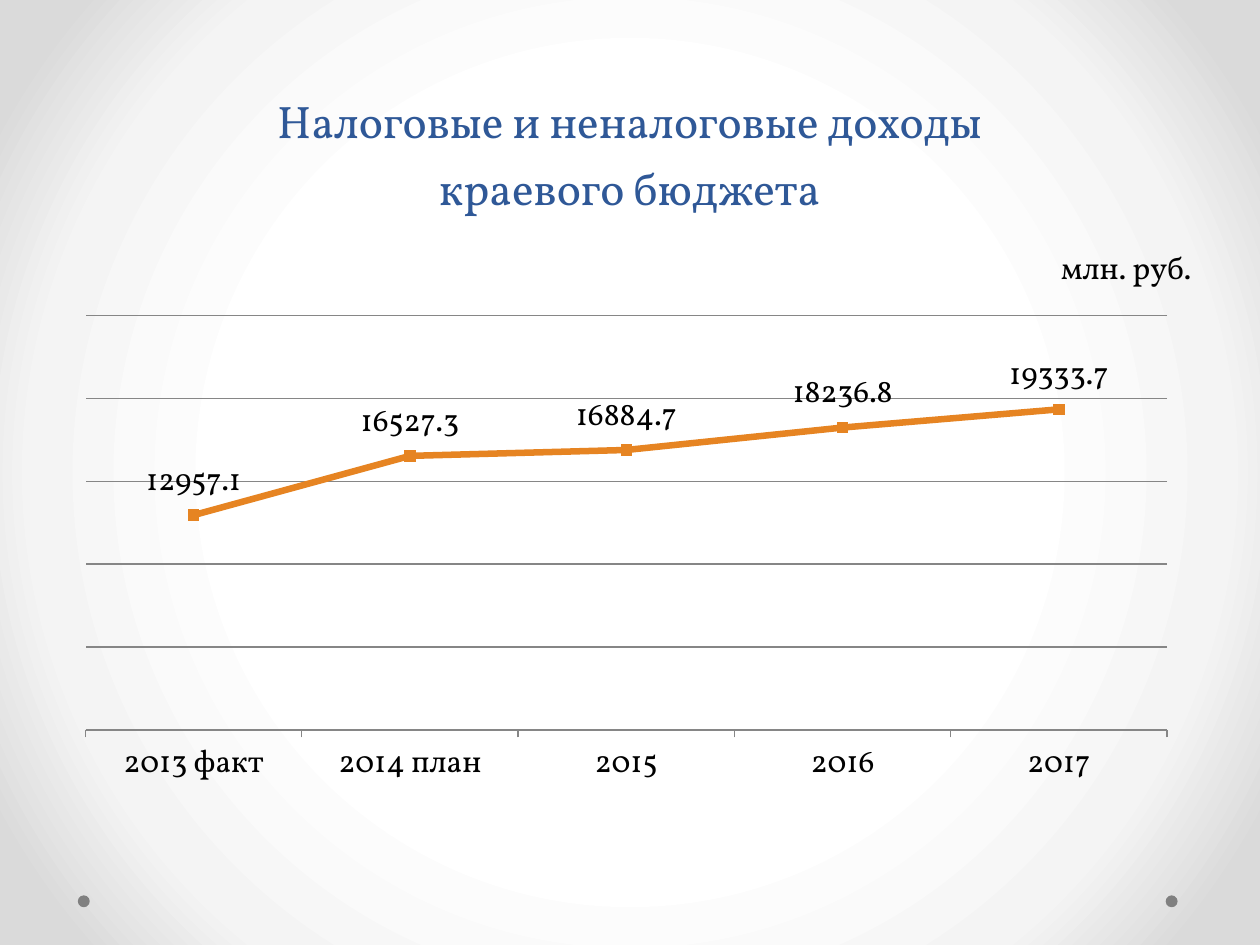
from lxml import etree
from pptx import Presentation
from pptx.chart.data import CategoryChartData
from pptx.dml.color import RGBColor
from pptx.enum.chart import (XL_CHART_TYPE, XL_LABEL_POSITION as LabelPos,
                             XL_MARKER_STYLE as Marker, XL_TICK_MARK as Tick)
from pptx.enum.shapes import MSO_SHAPE as Shape
from pptx.enum.text import MSO_ANCHOR as Anchor, PP_ALIGN as Align
from pptx.oxml import parse_xml
from pptx.oxml.ns import nsdecls, qn
from pptx.util import Cm, Pt

FONT = "Vollkorn"
COLORS = {"title": "2F5897", "text": "000000", "line": "E68422",
          "grid": "868686", "dot": "808080"}
BACKGROUND = [(50, "FFFFFF"), (76, "F4F4F4"), (92, "DADADA")]
INCOME = {"2013 факт": 12957.1, "2014 план": 16527.3, "2015": 16884.7,
          "2016": 18236.8, "2017": 19333.7}


def rgb(name):
    return RGBColor.from_string(COLORS[name])


def format_font(font, size=18, color="text"):
    font.name, font.size, font.bold = FONT, Pt(size), False
    font.color.rgb = rgb(color)


def add_text(tf, text, size=18, color="text", align=Align.CENTER, spacing=None):
    p = tf.paragraphs[0]
    p.text = text
    p.alignment = align
    p.line_spacing = spacing
    for r in p.runs:
        format_font(r.font, size, color)


def set_background(s):
    s.background.fill.gradient()
    grad = s.element.find(".//" + qn("a:gradFill"))
    stops = "".join(f'<a:gs pos="{pos * 1000}"><a:srgbClr val="{color}"/></a:gs>'
                    for pos, color in BACKGROUND)
    radial = parse_xml(
        f'<a:gradFill {nsdecls("a")} rotWithShape="1"><a:gsLst>{stops}</a:gsLst>'
        '<a:path path="circle"><a:fillToRect l="50000" t="50000" r="50000" '
        'b="50000"/></a:path></a:gradFill>')
    grad.getparent().replace(grad, radial)


def add_dot(s, left):
    sp = s.shapes.add_shape(Shape.OVAL, Cm(left), Cm(18.05), Cm(0.24), Cm(0.24))
    sp.shadow.inherit = False
    sp.fill.solid()
    sp.fill.fore_color.rgb = rgb("dot")
    sp.line.fill.background()


def add_title(s, text):
    tf = s.shapes.add_textbox(Cm(1.27), 0, Cm(22.86), Cm(4.45)).text_frame
    tf.word_wrap = True
    tf.vertical_anchor = Anchor.BOTTOM
    add_text(tf, text, size=26, color="title", spacing=Pt(38))


def place(parent, inner=False, **fractions):
    """Set a manual layout, in fractions of the chart, on a chart part."""
    layout = parent.find(qn("c:layout"))
    if layout is None:
        layout = etree.Element(qn("c:layout"))
        before = parent.find(qn("c:tx"))
        parent.insert(0 if before is None else parent.index(before) + 1, layout)
    for child in list(layout):
        layout.remove(child)
    manual = etree.SubElement(layout, qn("c:manualLayout"))
    settings = {"layoutTarget": "inner"} if inner else {}
    settings.update(xMode="edge", yMode="edge", **fractions)
    for tag, value in settings.items():
        etree.SubElement(manual, qn(f"c:{tag}")).set("val", str(value))


def add_income_chart(s):
    data = CategoryChartData(number_format="0.0")
    data.categories = list(INCOME)
    data.add_series("Series 1", list(INCOME.values()))
    chart = s.shapes.add_chart(XL_CHART_TYPE.LINE_MARKERS, Cm(1.27), Cm(4.45),
                               Cm(22.86), Cm(12.57), data).chart
    chart.has_legend = False
    format_font(chart.font)

    # Unit caption
    add_text(chart.chart_title.text_frame, "млн. руб.")
    chart.chart_title.include_in_layout = False
    title = chart.element.find(".//" + qn("c:title"))
    place(title, x=0.88, y=0.03)
    place(chart.element.find(".//" + qn("c:plotArea")), inner=True,
          x=0.02, y=0.152, w=0.959, h=0.665)

    # Axes
    values, cats = chart.value_axis, chart.category_axis
    values.minimum_scale, values.maximum_scale, values.major_unit = 0, 25000, 5000
    values.visible = False
    cats.major_tick_mark = Tick.OUTSIDE
    for line in (values.major_gridlines.format.line, cats.format.line):
        line.color.rgb = rgb("grid")
        line.width = Pt(0.75)

    # Line, markers and value labels
    plot = chart.plots[0]
    plot.vary_by_categories = False
    series = plot.series[0]
    series.smooth = False
    series.format.line.color.rgb = rgb("line")
    series.format.line.width = Pt(3.75)
    series.marker.style, series.marker.size = Marker.SQUARE, 6
    series.marker.format.fill.solid()
    series.marker.format.fill.fore_color.rgb = rgb("line")
    series.marker.format.line.color.rgb = rgb("line")
    labels = series.data_labels
    labels.show_value = True
    labels.position = LabelPos.ABOVE
    format_font(labels.font)


def main():
    prs = Presentation()
    prs.slide_width, prs.slide_height = Cm(25.4), Cm(19.05)
    s = prs.slides.add_slide(prs.slide_layouts[6])
    set_background(s)
    for left in (23.5, 1.57):
        add_dot(s, left)
    add_title(s, "Налоговые и неналоговые доходы\vкраевого бюджета")
    add_income_chart(s)
    prs.save("out.pptx")


if __name__ == "__main__":
    main()
